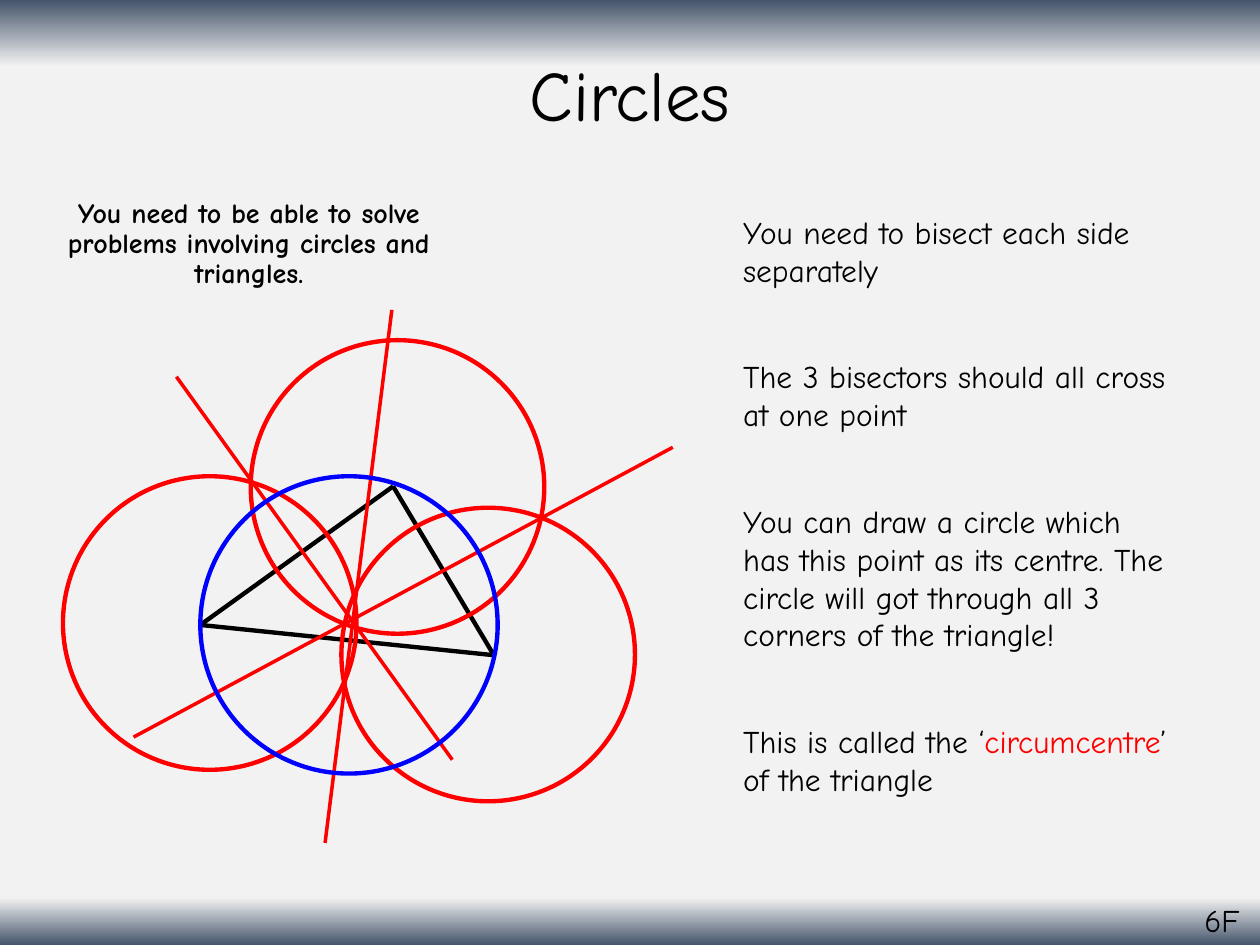
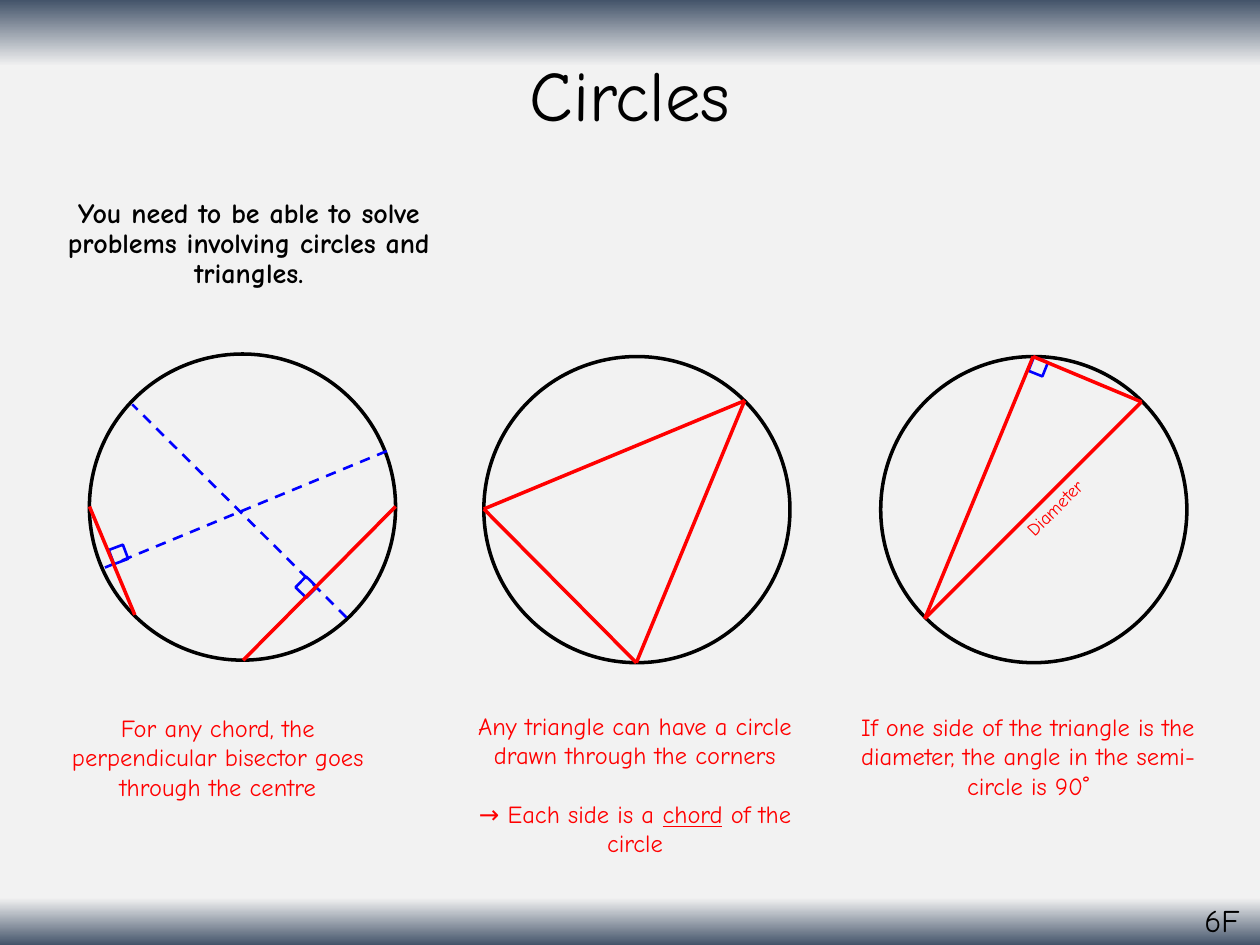
import copy
import pptx
import pptx.dml.color
import pptx.enum.dml
import pptx.enum.shapes
import pptx.enum.text
import pptx.oxml
import pptx.oxml.ns
import pptx.util
from pptx.util import Inches

FONT = "Comic Neue"
BLACK, RED, BLUE = "000000", "FF0000", "0000FF"
BACKGROUND_STOPS = [(0, "44546A"), (7, "F2F2F2"), (95, "F2F2F2"), (100, "44546A")]
ALIGN = pptx.enum.text.PP_ALIGN
ANCHOR = pptx.enum.text.MSO_ANCHOR
SHAPE = pptx.enum.shapes.MSO_SHAPE


def rgb(color):
    return pptx.dml.color.RGBColor.from_string(color)


def set_background(master):
    """Fade from a dark band at the top and bottom edges to pale grey."""
    fill = master.background.fill
    fill.gradient()
    fill.gradient_angle = 270
    stops = next(master.element.iter(pptx.oxml.ns.qn("a:gsLst")))
    while len(stops) < len(BACKGROUND_STOPS):
        stops.append(copy.deepcopy(stops[0]))
    for stop, (position, color) in zip(fill.gradient_stops, BACKGROUND_STOPS):
        stop.position = position / 100
        stop.color.rgb = rgb(color)


def add_text(s, box, paragraphs, size=18, color=BLACK, bold=False, align=ALIGN.LEFT,
             anchor=ANCHOR.TOP, gap=0, spacing=None, wrap=True, rotation=0):
    """Each paragraph is a list of (text, format) runs; gap separates paragraphs."""
    sp = s.shapes.add_textbox(*map(Inches, box))
    sp.rotation = rotation
    tf = sp.text_frame
    tf.word_wrap = wrap
    tf.vertical_anchor = anchor
    for i, runs in enumerate(paragraphs):
        p = tf.add_paragraph() if i else tf.paragraphs[0]
        p.alignment = align
        p.space_before = pptx.util.Pt(gap if i else 0)
        if spacing:
            p.line_spacing = spacing
        for text, fmt in runs:
            r = p.add_run()
            r.text = text
            r.font.name = FONT
            r.font.size = pptx.util.Pt(size)
            r.font.bold = bold
            r.font.underline = fmt.get("underline", False)
            r.font.color.rgb = rgb(fmt.get("color", color))


def add_outline(s, kind, x, y, size, color, width, rotation=0):
    """Unfilled shape of equal width and height."""
    sp = s.shapes.add_shape(kind, Inches(x), Inches(y), Inches(size), Inches(size))
    sp.shadow.inherit = False
    sp.fill.background()
    sp.line.color.rgb = rgb(color)
    sp.line.width = pptx.util.Pt(width)
    sp.rotation = rotation


def add_line(s, start, end, color, width, dashed=False):
    line = s.shapes.add_connector(pptx.enum.shapes.MSO_CONNECTOR.STRAIGHT,
                                  *map(Inches, (*start, *end)))
    line.line.color.rgb = rgb(color)
    line.line.width = pptx.util.Pt(width)
    if dashed:
        line.line.dash_style = pptx.enum.dml.MSO_LINE.DASH
    sp_pr = line._element.spPr
    sp_pr.append(pptx.oxml.parse_xml(
        "<a:effectLst %s/>" % pptx.oxml.ns.nsdecls("a")))


def add_triangle(s, corners, color, width):
    for start, end in zip(corners, corners[1:] + corners[:1]):
        add_line(s, start, end, color, width)


def add_lesson_slide(prs):
    s = prs.slides.add_slide(prs.slide_layouts[6])
    add_text(s, (0.69, 0.24, 8.62, 1.09), [[("Circles", {})]], size=40.5,
             align=ALIGN.CENTER, anchor=ANCHOR.MIDDLE, spacing=0.9)
    objective = "You need to be able to solve problems involving circles and triangles."
    add_text(s, (0.1, 1.53, 3.75, 5.22), [[(objective, {})]], size=16, bold=True,
             align=ALIGN.CENTER, spacing=0.9)
    add_text(s, (9.46, 7.1, 0.51, 0.4), [[("6F", {})]], wrap=False)
    return s


def build_circumcentre(prs):
    s = add_lesson_slide(prs)
    add_triangle(s, [(1.59, 4.96), (3.12, 3.86), (3.92, 5.2)], BLACK, 2.5)
    for x, y in [(0.5, 3.78), (1.99, 2.7), (2.71, 4.03)]:
        add_outline(s, SHAPE.OVAL, x, y, 2.33, RED, 2.5)
    bisectors = [((1.4, 2.99), (3.59, 6.03)),
                 ((1.06, 5.85), (5.34, 3.55)),
                 ((2.58, 6.69), (3.11, 2.46))]
    for start, end in bisectors:
        add_line(s, start, end, RED, 2)
    add_outline(s, SHAPE.OVAL, 1.59, 3.78, 2.36, BLUE, 2.5)
    add_text(s, (5.8, 1.64, 3.58, 5.21), [
        [("You need to bisect each side separately", {})],
        [("The 3 bisectors should all cross at one point", {})],
        [("You can draw a circle which has this point as its centre. "
          "The circle will got through all 3 corners of the triangle!", {})],
        [("This is called the ‘", {}), ("circumcentre", {"color": RED}),
         ("’ of the triangle", {})],
    ], gap=39.4)


def build_circle_facts(prs):
    s = add_lesson_slide(prs)
    for x, y in [(0.71, 2.81), (3.84, 2.83), (6.99, 2.83)]:
        add_outline(s, SHAPE.OVAL, x, y, 2.43, BLACK, 2)

    bisectors = [((2.75, 4.9), (1.05, 3.21)), ((3.07, 3.58), (0.82, 4.51))]
    for start, end in bisectors:
        add_line(s, start, end, BLUE, 1.5, dashed=True)
    right_angles = [(8.18, 2.85, 21.8), (2.37, 4.6, 44.4), (0.88, 4.34, 69.4)]
    for x, y, rotation in right_angles:
        add_outline(s, SHAPE.RECTANGLE, x, y, 0.12, BLUE, 1.5, rotation)
    chords = [((0.71, 4.02), (1.07, 4.88)), ((3.14, 4.02), (1.93, 5.24))]
    for start, end in chords:
        add_line(s, start, end, RED, 2)

    add_triangle(s, [(3.84, 4.04), (5.05, 5.26), (5.91, 3.18)], RED, 2)
    add_triangle(s, [(7.34, 4.91), (9.06, 3.19), (8.2, 2.83)], RED, 2)
    add_text(s, (7.92, 3.89, 0.91, 0.29), [[("Diameter", {})]], size=10.5,
             color=RED, align=ALIGN.CENTER, rotation=315.1)

    captions = [
        (0.26, 5.61, 0.81, [[("For any chord, the perpendicular bisector goes "
                              "through the centre", {})]]),
        (3.57, 5.59, 1.28, [
            [("Any triangle can have a circle drawn through the corners", {})],
            [("→ Each side is a ", {}), ("chord", {"underline": True}),
             (" of the circle", {})]]),
        (6.69, 5.6, 0.81, [[("If one side of the triangle is the diameter, "
                             "the angle in the semi-circle is 90˚", {})]]),
    ]
    for x, y, height, paragraphs in captions:
        add_text(s, (x, y, 2.94, height), paragraphs, size=14, color=RED,
                 align=ALIGN.CENTER, gap=16.8)


def main():
    prs = pptx.Presentation()
    prs.slide_width, prs.slide_height = Inches(10), Inches(7.5)
    set_background(prs.slide_master)
    build_circumcentre(prs)
    build_circle_facts(prs)
    prs.save("out.pptx")


if __name__ == "__main__":
    main()
